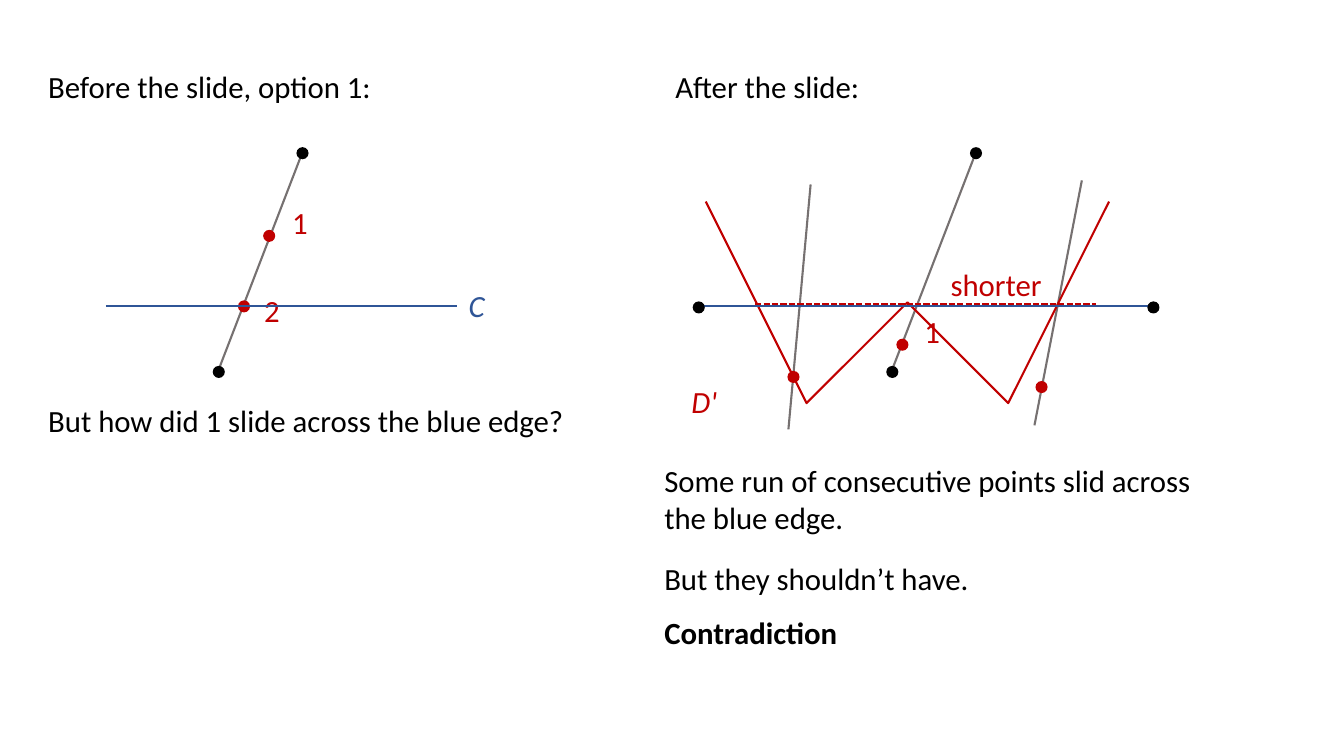
from pptx import Presentation
from pptx.dml.color import RGBColor
from pptx.enum.dml import MSO_LINE
from pptx.enum.shapes import MSO_CONNECTOR, MSO_SHAPE
from pptx.enum.text import MSO_AUTO_SIZE
from pptx.oxml.xmlchemy import OxmlElement
from pptx.util import Inches, Pt

STRAIGHT = MSO_CONNECTOR.STRAIGHT
OVAL = MSO_SHAPE.OVAL
DASHED = MSO_LINE.SQUARE_DOT
FIT_SHAPE = MSO_AUTO_SIZE.SHAPE_TO_FIT_TEXT

BLACK = RGBColor(0x00, 0x00, 0x00)
RED = RGBColor(0xC0, 0x00, 0x00)
BLUE = RGBColor(0x2F, 0x55, 0x97)
GRAY = RGBColor(0x76, 0x71, 0x71)

# Grid: two text columns, and the distance between the two drawings
LEFT_COLUMN, RIGHT_COLUMN = 0.38, 6.49
SHIFT = 6.68
HEADING_ROW = 0.62
EDGE_ROW = 3.04
LINE_HEIGHT = 0.47
LABEL_WIDTH = 0.68
DOT_SIZE = 0.12
LINE_WIDTH = Pt(1.5)

deck = Presentation()
deck.slide_width, deck.slide_height = Inches(13.33), Inches(7.5)
page = deck.slides.add_slide(deck.slide_layouts[6])


def add_line(start, end, color, dash=None):
    ends = [Inches(value) for value in (*start, *end)]
    line = page.shapes.add_connector(STRAIGHT, *ends)
    line.line.color.rgb = color
    line.line.width = LINE_WIDTH
    if dash:
        line.line.dash_style = dash
    line._element.spPr.append(OxmlElement("a:effectLst"))


def add_text(text, left, top, width, height=LINE_HEIGHT, **formats):
    box = page.shapes.add_textbox(*map(Inches, (left, top, width, height)))
    box.text_frame.word_wrap = True
    box.text_frame.auto_size = FIT_SHAPE
    span = box.text_frame.paragraphs[0].add_run()
    span.text = text
    span.font.color.rgb = formats.pop("color", BLACK)
    for name, value in {"name": "Calibri", "size": Pt(22), **formats}.items():
        setattr(span.font, name, value)


# Gray edges: the tilted one stands in both drawings
for offset in (0, SHIFT):
    add_line((3 + offset, 1.51), (2.16 + offset, 3.69), GRAY)
add_line((10.73, 1.79), (10.26, 4.22), GRAY)
add_line((8.04, 1.83), (7.82, 4.26), GRAY)

# Red curve D' and its shortcut along the blue edge
curve_points = [(7.13, 2.29), (7.87, 3.76), (8.95, 3.42), (10.33, 3.87), (11.45, 2.06)]
curve = page.shapes.build_freeform(*curve_points[0], scale=Inches(1))
curve.add_line_segments(curve_points[1:], close=False)
curve_shape = curve.convert_to_shape()
curve_shape.shadow.inherit = False
curve_shape.fill.background()
curve_shape.line.color.rgb = RED
curve_shape.line.width = LINE_WIDTH
add_line((7.49, 3.02), (10.87, 3.02), RED, DASHED)

# Labels in the drawings
for text, left, top, width, color, italic in [
    ("1", 2.8, 1.97, LABEL_WIDTH, RED, False),
    ("2", 2.52, 2.85, LABEL_WIDTH, RED, False),
    ("C", 4.55, 2.8, LABEL_WIDTH, BLUE, True),
    ("shorter", 9.33, 2.59, 1.34, RED, False),
    ("1", 9.07, 3.05, LABEL_WIDTH, RED, False),
    ("D'", 6.76, 3.75, LABEL_WIDTH, RED, True),
]:
    add_text(text, left, top, width, color=color, italic=italic)

# Points, with the blue edges drawn between the red and the black ones
red_points = [(2.42, 3.04), (2.67, 2.34), (8.95, 3.42), (10.33, 3.84), (7.87, 3.74)]
tilted_ends = [(x + offset, y) for offset in (0, SHIFT) for x, y in [(2.17, 3.69), (3, 1.52)]]
black_points = tilted_ends + [(6.93, 3.05), (11.44, 3.05)]
for color, points in [(RED, red_points), (BLACK, black_points)]:
    for x, y in points:
        corner = Inches(x - DOT_SIZE / 2), Inches(y - DOT_SIZE / 2)
        dot = page.shapes.add_shape(OVAL, *corner, Inches(DOT_SIZE), Inches(DOT_SIZE))
        dot.shadow.inherit = False
        dot.fill.solid()
        dot.fill.fore_color.rgb = color
        dot.line.fill.background()
    if color == RED:
        for start, end in [(1.05, 4.53), (6.92, 11.41)]:
            add_line((start, EDGE_ROW), (end, EDGE_ROW), BLUE)

# Headings and argument
add_text("Before the slide, option 1:", LEFT_COLUMN, HEADING_ROW, 3.74)
add_text("But how did 1 slide across the blue edge?", LEFT_COLUMN, 3.94, 5.63)
add_text("After the slide:", 6.6, HEADING_ROW, 2.31)
add_text("Some run of consecutive points slid across the blue edge.",
         RIGHT_COLUMN, 4.53, 5.84, 0.84)
add_text("But they shouldn’t have.", RIGHT_COLUMN, 5.5, 3.43)
add_text("Contradiction", RIGHT_COLUMN, 6.04, 3.43, bold=True)

deck.save("out.pptx")
